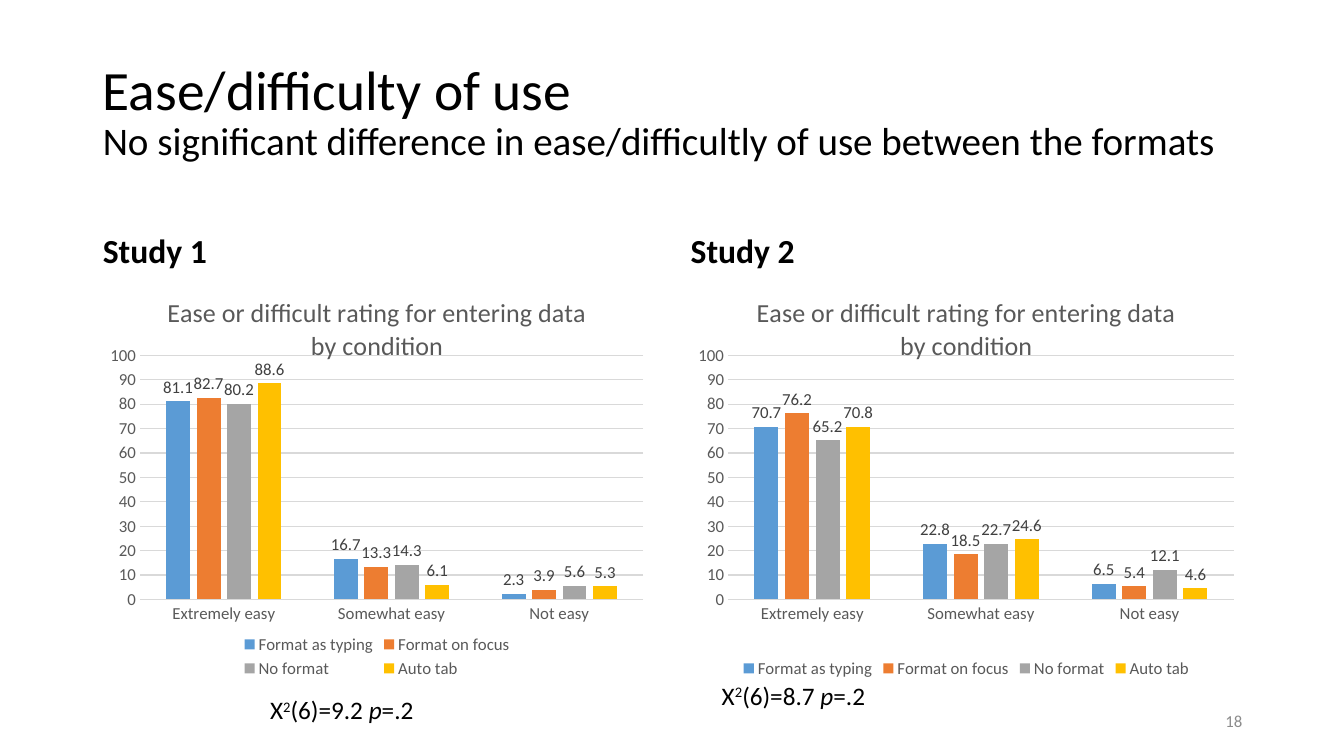
"""Build the slide comparing ease-of-use ratings across two studies."""
from dataclasses import dataclass

from pptx import Presentation
from pptx.chart.chart import Chart
from pptx.chart.data import CategoryChartData
from pptx.dml.color import RGBColor
from pptx.enum.chart import XL_CHART_TYPE as ChartType
from pptx.enum.chart import XL_LABEL_POSITION as LabelPosition
from pptx.enum.chart import XL_LEGEND_POSITION as LegendPosition
from pptx.enum.chart import XL_TICK_MARK as TickMark
from pptx.enum.text import MSO_ANCHOR as Anchor
from pptx.enum.text import MSO_AUTO_SIZE as AutoSize
from pptx.enum.text import PP_ALIGN as Align
from pptx.oxml import parse_xml
from pptx.slide import Slide
from pptx.text.text import Font
from pptx.util import Inches, Pt

FONT = "Calibri"
BLACK = RGBColor(0x00, 0x00, 0x00)
LABEL_GRAY = RGBColor(0x40, 0x40, 0x40)
AXIS_GRAY = RGBColor(0x59, 0x59, 0x59)
NUMBER_GRAY = RGBColor(0x8C, 0x8C, 0x8C)
GRID_GRAY = RGBColor(0xD9, 0xD9, 0xD9)
BLUE = RGBColor(0x5B, 0x9B, 0xD5)
ORANGE = RGBColor(0xED, 0x7D, 0x31)
GRAY = RGBColor(0xA5, 0xA5, 0xA5)
YELLOW = RGBColor(0xFF, 0xC0, 0x00)

FORMATS = {
    "Format as typing": BLUE,
    "Format on focus": ORANGE,
    "No format": GRAY,
    "Auto tab": YELLOW,
}
RATINGS = ("Extremely easy", "Somewhat easy", "Not easy")
CHART_TITLE = "Ease or difficult rating for entering data by condition"
PLOT_LAYOUT = (
    '<c:layout xmlns:c="http://schemas.openxmlformats.org/drawingml/2006/chart">'
    '<c:manualLayout><c:layoutTarget val="inner"/>'
    '<c:xMode val="edge"/><c:yMode val="edge"/>'
    '<c:x val="0.083"/><c:y val="0.195"/><c:w val="0.885"/><c:h val="0.601"/>'
    "</c:manualLayout></c:layout>"
)


@dataclass(frozen=True)
class Study:
    """One column of the slide, with lengths in inches."""

    heading: str
    placeholder: int
    left: float
    width: float
    values: tuple[tuple[float, ...], ...]
    chi_square: str
    note_left: float
    note_top: float


STUDIES = (
    Study("Study 1", 1, 0.92, 5.64,
          ((81.1, 16.7, 2.3), (82.7, 13.3, 3.9), (80.2, 14.3, 5.6), (88.6, 6.1, 5.3)),
          "9.2", 2.58, 6.84),
    Study("Study 2", 3, 6.75, 5.67,
          ((70.7, 22.8, 6.5), (76.2, 18.5, 5.4), (65.2, 22.7, 12.1), (70.8, 24.6, 4.6)),
          "8.7", 7.06, 6.7),
)


def set_font(font: Font, size: float, color: RGBColor, bold: bool = False) -> None:
    """Apply the slide's typeface with a size, colour and weight."""
    font.name = FONT
    font.size = Pt(size)
    font.bold = bold
    font.color.rgb = color


def place(box, left: float, top: float, width: float, height: float) -> None:
    """Move and size a shape in inches."""
    box.left, box.top = Inches(left), Inches(top)
    box.width, box.height = Inches(width), Inches(height)


def add_title(page: Slide) -> None:
    """Fill the title with its large and small lines."""
    box = page.shapes.title
    place(box, 0.92, 0.4, 11.5, 1.45)
    frame = box.text_frame
    frame.auto_size = AutoSize.NONE
    frame.vertical_anchor = Anchor.MIDDLE
    para = frame.paragraphs[0]
    para.alignment = Align.LEFT
    para.line_spacing = 0.9
    set_font(para.font, 39.6, BLACK)
    para.add_run().text = "Ease/difficulty of use"
    para.add_line_break()
    span = para.add_run()
    span.text = "No significant difference in ease/difficultly of use between the formats"
    span.font.size = Pt(27.9)


def add_heading(page: Slide, study: Study) -> None:
    """Fill the heading placeholder above a chart."""
    box = page.placeholders[study.placeholder]
    place(box, study.left, 1.84, study.width, 0.9)
    frame = box.text_frame
    frame.text = study.heading
    frame.auto_size = AutoSize.NONE
    frame.vertical_anchor = Anchor.BOTTOM
    para = frame.paragraphs[0]
    para.line_spacing = 0.9
    para.space_before = Pt(0)
    set_font(para.font, 24, BLACK, bold=True)


def style_axes(chart: Chart) -> None:
    """Format both axes and the gridlines."""
    for axis in (chart.category_axis, chart.value_axis):
        axis.major_tick_mark = axis.minor_tick_mark = TickMark.NONE
        set_font(axis.tick_labels.font, 12, AXIS_GRAY)
    value_axis = chart.value_axis
    value_axis.minimum_scale, value_axis.maximum_scale = 0, 100
    value_axis.major_unit = 10
    value_axis.format.line.fill.background()
    for line in (chart.category_axis.format.line, value_axis.major_gridlines.format.line):
        line.color.rgb = GRID_GRAY
        line.width = Pt(0.75)


def add_ratings_chart(page: Slide, study: Study) -> None:
    """Add the clustered columns of one study."""
    data = CategoryChartData()
    data.categories = RATINGS
    for name, values in zip(FORMATS, study.values):
        data.add_series(name, values)
    chart = page.shapes.add_chart(
        ChartType.COLUMN_CLUSTERED, Inches(study.left), Inches(2.74),
        Inches(study.width), Inches(4.03), data).chart
    set_font(chart.font, 10, BLACK)
    chart.has_title = True
    chart.chart_title.include_in_layout = False
    para = chart.chart_title.text_frame.paragraphs[0]
    para.add_run().text = CHART_TITLE
    set_font(para.font, 18.6, AXIS_GRAY)
    chart.has_legend = True
    chart.legend.position = LegendPosition.BOTTOM
    chart.legend.include_in_layout = False
    set_font(chart.legend.font, 12, AXIS_GRAY)
    style_axes(chart)

    plot = chart.plots[0]
    plot.gap_width, plot.overlap = 219, -27
    plot.vary_by_categories = False
    for series, color in zip(plot.series, FORMATS.values()):
        series.format.fill.solid()
        series.format.fill.fore_color.rgb = color
        labels = series.data_labels
        labels.show_value = True
        labels.position = LabelPosition.OUTSIDE_END
        set_font(labels.font, 12, LABEL_GRAY)

    plot_area = chart._chartSpace.chart.plotArea
    for layout in plot_area.xpath("c:layout"):
        plot_area.remove(layout)
    plot_area.insert(0, parse_xml(PLOT_LAYOUT))


def add_chi_square(page: Slide, study: Study) -> None:
    """Add the test result below a chart."""
    box = page.shapes.add_textbox(
        Inches(study.note_left), Inches(study.note_top), Inches(5.05), Inches(0.4))
    box.text_frame.word_wrap = True
    para = box.text_frame.paragraphs[0]
    set_font(para.font, 18, BLACK)
    for text in ("Χ", "2", f"(6)={study.chi_square} ", "p", "=.2"):
        span = para.add_run()
        span.text = text
        if text == "2":
            span._r.get_or_add_rPr().set("baseline", "30000")
        elif text == "p":
            span.font.italic = True


def add_page_number(page: Slide) -> None:
    """Add the page number at the lower right."""
    box = page.shapes.add_textbox(Inches(9.42), Inches(6.95), Inches(3), Inches(0.4))
    frame = box.text_frame
    frame.word_wrap = True
    frame.vertical_anchor = Anchor.MIDDLE
    frame.text = "18"
    para = frame.paragraphs[0]
    para.alignment = Align.RIGHT
    set_font(para.font, 12, NUMBER_GRAY)


def main() -> None:
    """Build and save the deck."""
    deck = Presentation()
    deck.slide_width, deck.slide_height = Inches(13.33), Inches(7.5)
    page = deck.slides.add_slide(deck.slide_layouts.get_by_name("Comparison"))
    add_title(page)
    for study in STUDIES:
        add_heading(page, study)
        add_ratings_chart(page, study)
        add_chi_square(page, study)
    add_page_number(page)
    for box in list(page.placeholders):
        if not box.text_frame.text:
            box.element.getparent().remove(box.element)
    deck.save("out.pptx")


if __name__ == "__main__":
    main()
